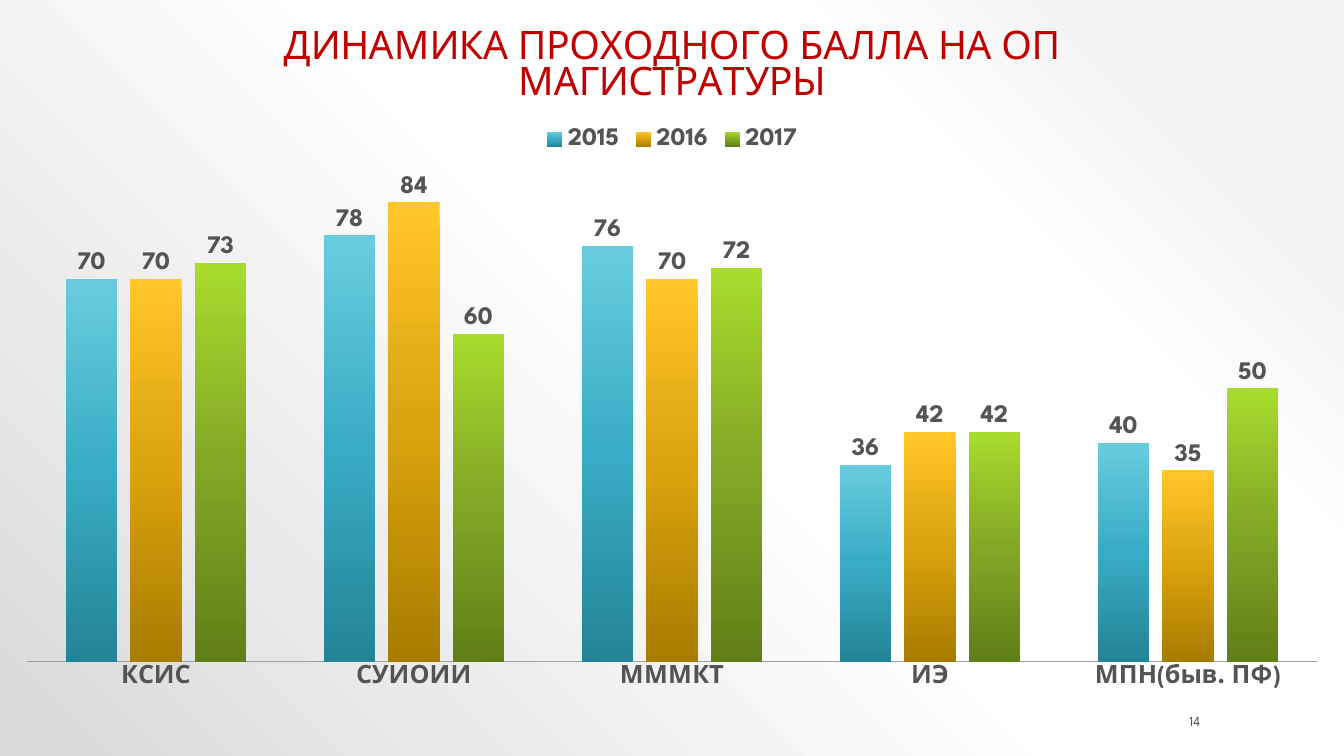
from dataclasses import dataclass

from lxml import etree
from pptx import Presentation
from pptx import util as u
from pptx.chart.data import CategoryChartData
from pptx.dml.color import RGBColor
from pptx.enum import chart as charts
from pptx.enum import text
from pptx.oxml import parse_xml
from pptx.oxml.ns import nsdecls, qn

EMU_PER_PX = 914400 / 100.8
FONT = "League Spartan"
GREY = RGBColor(0x54, 0x54, 0x54)
AXIS_GREY = RGBColor(0xA0, 0xA0, 0xA0)
TITLE_RED = RGBColor(0xC0, 0x00, 0x00)
PALE = RGBColor(0xF2, 0xF2, 0xF2)
WHITE = RGBColor(0xFF, 0xFF, 0xFF)
SILVER = RGBColor(0xD9, 0xD9, 0xD9)

TITLE = "ДИНАМИКА ПРОХОДНОГО БАЛЛА НА ОП МАГИСТРАТУРЫ"
PROGRAMMES = ["КСИС", "СУИОИИ", "МММКТ", "ИЭ", "МПН(быв. ПФ)"]
VERTICAL = '<a:lin ang="5400000" scaled="0"/>'
FROM_TOP_RIGHT = '<a:path path="circle"><a:fillToRect l="100000" b="100000"/></a:path>'

Stops = list[tuple[int, RGBColor]]


@dataclass(frozen=True)
class Year:
    name: str
    scores: list[int]
    top: RGBColor
    middle: RGBColor
    bottom: RGBColor


YEARS = [
    Year("2015", [70, 78, 76, 36, 40], RGBColor(0x68, 0xCC, 0xDE),
         RGBColor(0x38, 0xAC, 0xC4), RGBColor(0x24, 0x84, 0x97)),
    Year("2016", [70, 84, 70, 42, 35], RGBColor(0xFF, 0xC7, 0x2B),
         RGBColor(0xDA, 0xA2, 0x0C), RGBColor(0xA8, 0x7C, 0x00)),
    Year("2017", [73, 60, 72, 42, 50], RGBColor(0xA8, 0xDC, 0x2C),
         RGBColor(0x82, 0xA8, 0x26), RGBColor(0x61, 0x7F, 0x17)),
]


def px(length: int) -> u.Emu:
    return u.Emu(round(length * EMU_PER_PX))


def style_font(font, size: int, color: RGBColor, bold: bool = False) -> None:
    font.name = FONT
    font.size = u.Pt(size)
    font.bold = bold
    font.color.rgb = color


def replace_gradient(gradient: etree._Element, stops: Stops, direction: str) -> None:
    """Swap a default two-stop gradient for the given stops and direction."""
    stop_xml = "".join(
        f'<a:gs pos="{percent * 1000}"><a:srgbClr val="{color}"/></a:gs>'
        for percent, color in stops
    )
    gradient.getparent().replace(gradient, parse_xml(
        f'<a:gradFill {nsdecls("a")} rotWithShape="1">'
        f"<a:gsLst>{stop_xml}</a:gsLst>{direction}</a:gradFill>"
    ))


def place_plot(chart, x: float, y: float, width: float, height: float) -> None:
    """Fix the inner plot area, in fractions of the chart."""
    plot_area = chart.element.find(".//" + qn("c:plotArea"))
    for layout in plot_area.findall(qn("c:layout")):
        plot_area.remove(layout)
    plot_area.insert(0, parse_xml(
        f'<c:layout {nsdecls("c")}><c:manualLayout><c:layoutTarget val="inner"/>'
        f'<c:xMode val="edge"/><c:yMode val="edge"/><c:x val="{x}"/><c:y val="{y}"/>'
        f'<c:w val="{width}"/><c:h val="{height}"/></c:manualLayout></c:layout>'
    ))


def add_score_chart(slide) -> None:
    data = CategoryChartData()
    data.categories = PROGRAMMES
    for year in YEARS:
        data.add_series(year.name, year.scores)
    chart = slide.shapes.add_chart(
        charts.XL_CHART_TYPE.COLUMN_CLUSTERED, px(0), px(1), px(1344), px(703), data
    ).chart
    style_font(chart.font, 18, GREY, bold=True)

    chart.has_title = True
    chart.chart_title.include_in_layout = False
    title = chart.chart_title.text_frame
    title.text = TITLE
    style_font(title.paragraphs[0].font, 28, TITLE_RED)
    style_font(title.paragraphs[0].runs[0].font, 28, TITLE_RED)

    chart.has_legend = True
    chart.legend.position = charts.XL_LEGEND_POSITION.TOP
    chart.legend.include_in_layout = False

    axis = chart.category_axis
    axis.major_tick_mark = charts.XL_TICK_MARK.NONE
    axis.format.line.color.rgb = AXIS_GREY
    axis.format.line.width = u.Pt(0.75)
    chart.value_axis.minimum_scale = 0
    chart.value_axis.maximum_scale = 90
    chart.value_axis.has_major_gridlines = False
    chart.value_axis.visible = False

    plot = chart.plots[0]
    plot.vary_by_categories = False
    plot.gap_width = 150
    plot.overlap = -25
    plot.has_data_labels = True
    plot.data_labels.show_value = True
    plot.data_labels.position = charts.XL_LABEL_POSITION.OUTSIDE_END
    style_font(plot.data_labels.font, 18, GREY, bold=True)
    for series in plot.series:
        series.invert_if_negative = False
        series.format.fill.gradient()
    gradients = chart.element.findall(".//" + qn("a:gradFill"))
    for gradient, year in zip(gradients, YEARS):
        stops = [(0, year.top), (50, year.middle), (100, year.bottom)]
        replace_gradient(gradient, stops, VERTICAL)
    place_plot(chart, 0.02, 0.24, 0.96, 0.7)


def add_page_number(slide) -> None:
    frame = slide.shapes.add_textbox(px(1084), px(711), px(126), px(20)).text_frame
    frame.word_wrap = True
    frame.margin_top = frame.margin_bottom = 0
    frame.vertical_anchor = text.MSO_ANCHOR.MIDDLE
    frame.text = "14"
    paragraph = frame.paragraphs[0]
    paragraph.alignment = text.PP_ALIGN.RIGHT
    style_font(paragraph.font, 10, GREY)


def main() -> None:
    presentation = Presentation()
    presentation.slide_width = px(1344)
    presentation.slide_height = px(756)
    slide = presentation.slides.add_slide(presentation.slide_layouts[6])
    slide.background.fill.gradient()
    replace_gradient(
        slide.element.find(".//" + qn("a:gradFill")),
        [(10, PALE), (28, WHITE), (48, WHITE), (100, SILVER)],
        FROM_TOP_RIGHT,
    )
    add_page_number(slide)
    add_score_chart(slide)
    presentation.save("out.pptx")


if __name__ == "__main__":
    main()
